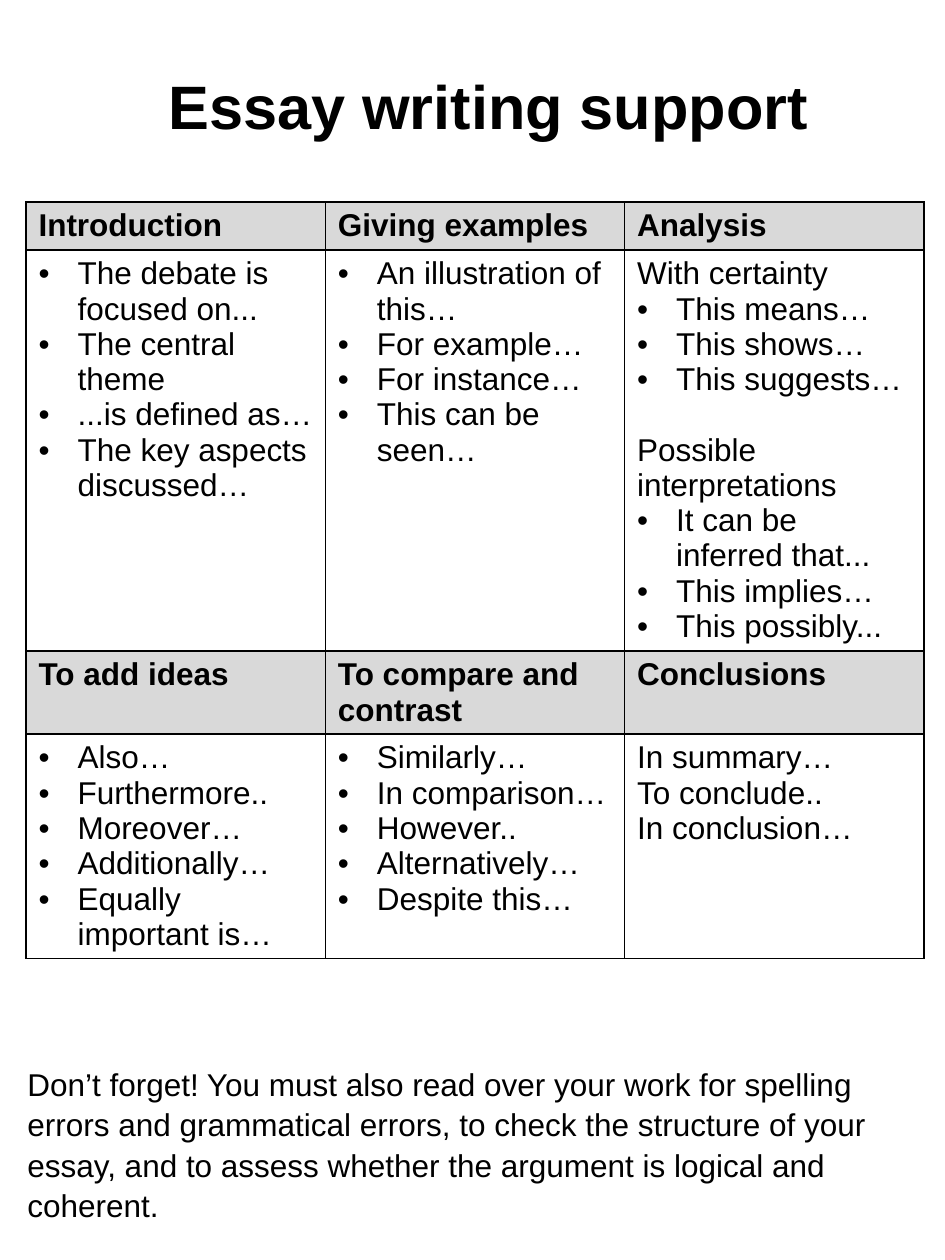
import pptx
import pptx.util
import pptx.dml.color
import pptx.enum.text
import pptx.oxml.ns
import lxml.etree

PX = 914400 / 126
FONT = "Arial"
BLACK = pptx.dml.color.RGBColor(0x00, 0x00, 0x00)
GREY = pptx.dml.color.RGBColor(0xD9, 0xD9, 0xD9)
BODY_SIZE = 18
LINE_HEIGHT = 20.1
BULLET_INDENT = 39
ROW_HEIGHTS = [48, 401, 83, 224]

# Each section: heading, then lines; a leading bullet marks a list item
SECTIONS = [
    [
        ("Introduction", ["• The debate is focused on...", "• The central theme",
                          "• ...is defined as…", "• The key aspects discussed…"]),
        ("Giving examples", ["• An illustration of this…", "• For example…",
                             "• For instance…", "• This can be seen…"]),
        ("Analysis", ["With certainty", "• This means…", "• This shows…",
                      "• This suggests…", "Possible interpretations",
                      "• It can be inferred that...", "• This implies…",
                      "• This possibly..."]),
    ],
    [
        ("To add ideas", ["• Also…", "• Furthermore..", "• Moreover…",
                          "• Additionally…", "• Equally important is…"]),
        ("To compare and contrast", ["• Similarly…", "• In comparison…", "• However..",
                                     "• Alternatively…", "• Despite this…"]),
        ("Conclusions", ["In summary…", "To conclude..", "In conclusion…"]),
    ],
]
NOTE = ("Don’t forget! You must also read over your work for spelling errors and "
        "grammatical errors, to check the structure of your essay, and to assess "
        "whether the argument is logical and coherent.")


def px(length):
    return pptx.util.Emu(round(length * PX))


def add_span(para, text, size=BODY_SIZE, bold=False):
    span = para.add_run()
    span.text = text
    span.font.name = FONT
    span.font.size = pptx.util.Pt(size)
    span.font.bold = bold
    span.font.color.rgb = BLACK


def add_child(parent, tag, **attributes):
    return lxml.etree.SubElement(parent, pptx.oxml.ns.qn(tag), **attributes)


def add_bullet(para):
    properties = para._p.get_or_add_pPr()
    indent = px(BULLET_INDENT)
    properties.set("marL", str(indent))
    properties.set("indent", str(-indent))
    add_child(properties, "a:buFont", typeface=FONT)
    add_child(properties, "a:buChar", char="•")


def style_cell(cell, fill):
    properties = cell._tc.get_or_add_tcPr()
    for side in ("a:lnL", "a:lnR", "a:lnT", "a:lnB"):
        line = add_child(properties, side, w=str(pptx.util.Pt(1)))
        add_child(add_child(line, "a:solidFill"), "a:srgbClr", val=str(BLACK))
    if fill is None:
        cell.fill.background()
    else:
        cell.fill.solid()
        cell.fill.fore_color.rgb = fill


def fill_cell(cell, lines):
    frame = cell.text_frame
    for number, line in enumerate(lines):
        para = frame.add_paragraph() if number else frame.paragraphs[0]
        bulleted = line.startswith("• ")
        # A subheading after a list stands one line clear of it
        if not bulleted and number and lines[number - 1].startswith("• "):
            para.space_before = pptx.util.Pt(LINE_HEIGHT)
        if bulleted:
            add_bullet(para)
        add_span(para, line.removeprefix("• "))


def add_title(page, left, top, width, height):
    title = page.shapes.title
    title.left, title.top = px(left), px(top)
    title.width, title.height = px(width), px(height)
    frame = title.text_frame
    frame.auto_size = pptx.enum.text.MSO_AUTO_SIZE.NONE
    frame.vertical_anchor = pptx.enum.text.MSO_ANCHOR.MIDDLE
    para = frame.paragraphs[0]
    para.alignment = pptx.enum.text.PP_ALIGN.CENTER
    add_span(para, "Essay writing support", 35, True)


def add_phrase_table(page, left, top, width):
    columns = len(SECTIONS[0])
    table = page.shapes.add_table(len(ROW_HEIGHTS), columns, px(left), px(top),
                                  px(width), px(sum(ROW_HEIGHTS))).table
    table.first_row = table.horz_banding = False
    for column in table.columns:
        column.width = px(width / columns)
    for row, height in zip(table.rows, ROW_HEIGHTS):
        row.height = px(height)
    for band, sections in enumerate(SECTIONS):
        for column, (heading, lines) in enumerate(sections):
            header = table.cell(2 * band, column)
            style_cell(header, GREY)
            add_span(header.text_frame.paragraphs[0], heading, bold=True)
            body = table.cell(2 * band + 1, column)
            style_cell(body, None)
            fill_cell(body, lines)


def add_note(page, left, top, width, height):
    box = page.shapes.add_textbox(px(left), px(top), px(width), px(height))
    box.text_frame.word_wrap = True
    para = box.text_frame.paragraphs[0]
    para.line_spacing = 1.07
    add_span(para, NOTE)


def main():
    deck = pptx.Presentation()
    deck.slide_width, deck.slide_height = px(945), px(1260)
    page = deck.slides.add_slide(deck.slide_layouts[5])
    add_phrase_table(page, 26, 202, 898)
    add_title(page, 63, 0, 851, 210)
    add_note(page, 15, 1056, 926, 160)
    deck.save("out.pptx")


if __name__ == "__main__":
    main()
